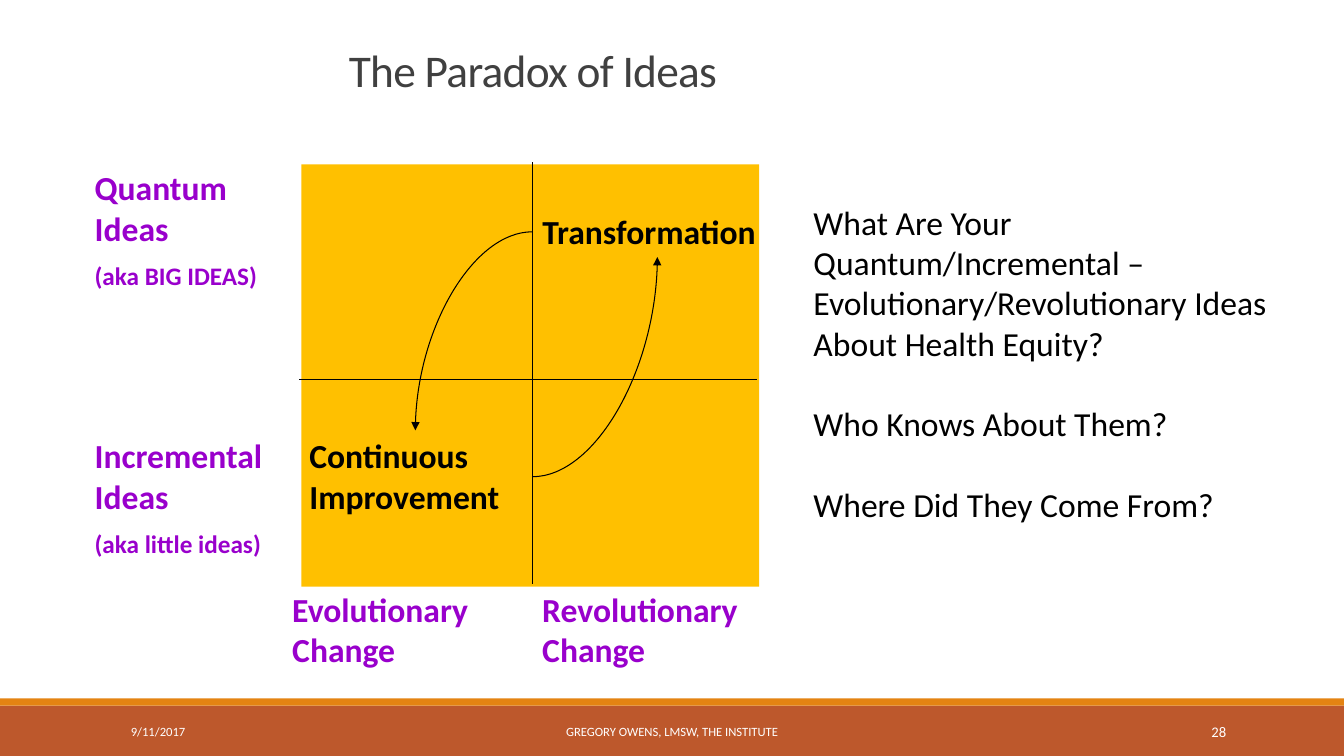
import pptx
import pptx.dml.color
import pptx.enum.shapes
import pptx.enum.text
import pptx.oxml
import pptx.oxml.ns
import pptx.util

PX = 9144
COLOURS = {
    "title": "404040",
    "ink": "000000",
    "axis": "9900CC",
    "matrix": "FFC000",
    "footer": "BD582C",
    "stripe": "E48312",
    "light": "FFFFFF",
}
ALIGN = pptx.enum.text.PP_ALIGN
ANCHOR = pptx.enum.text.MSO_ANCHOR
CONNECTOR = pptx.enum.shapes.MSO_CONNECTOR
QUADRANT_TEXTS = [
    (84, 161, 208, 136, "axis", "Quantum Ideas", "(aka BIG IDEAS)"),
    (84, 427, 212, 136, "axis", "Incremental Ideas", "(aka little ideas)"),
    (280, 579, 248, 91, "axis", "Evolutionary Change", None),
    (528, 579, 273, 91, "axis", "Revolutionary Change", None),
    (528, 204, 248, 50, "ink", "Transformation", None),
    (297, 427, 231, 91, "ink", "Continuous Improvement", None),
]
QUESTIONS = [
    "What Are Your Quantum/Incremental – Evolutionary/Revolutionary Ideas About Health Equity?",
    "Who Knows About Them?",
    "Where Did They Come From?",
]
FOOTER_TEXTS = [
    (120, 270, "9/11/2017", 9, ALIGN.LEFT),
    (403, 527, "GREGORY OWENS, LMSW, THE INSTITUTE", 9, ALIGN.CENTER),
    (1083, 143, "28", 10.5, ALIGN.RIGHT),
]


def colour(name):
    return pptx.dml.color.RGBColor.from_string(COLOURS[name])


def write(frame, text, size=24, ink="ink", bold=False, align=ALIGN.LEFT,
          before=0, spacing=None, tracking=None):
    """Write text into the empty first paragraph of a frame, or into a new one."""
    para = frame.paragraphs[0] if not frame.text else frame.add_paragraph()
    para.alignment = align
    para.space_before = pptx.util.Pt(before)
    if spacing:
        para.line_spacing = spacing
    span = para.add_run()
    span.text = text
    span.font.name = "Calibri"
    span.font.size = pptx.util.Pt(size)
    span.font.bold = bold
    span.font.color.rgb = colour(ink)
    if tracking:
        span.font._element.set("spc", str(tracking))


class SlideBuilder:
    def __init__(self, page):
        self.page = page
        self.line_width = pptx.util.Pt(0.75)

    def title(self, text, left, top, width, height):
        box = self.page.shapes.title
        box.left, box.top, box.width, box.height = (
            value * PX for value in (left, top, width, height))
        frame = box.text_frame
        frame.auto_size = pptx.enum.text.MSO_AUTO_SIZE.NONE
        frame.vertical_anchor = ANCHOR.BOTTOM
        write(frame, text, size=32.4, ink="title", spacing=0.85, tracking=-50)

    def rectangle(self, left, top, width, height, fill):
        box = self.page.shapes.add_shape(
            pptx.enum.shapes.MSO_SHAPE.RECTANGLE,
            left * PX, top * PX, width * PX, height * PX)
        box.shadow.inherit = False
        box.fill.solid()
        box.fill.fore_color.rgb = colour(fill)
        box.line.fill.background()

    def textbox(self, left, top, width, height, anchor=ANCHOR.TOP):
        box = self.page.shapes.add_textbox(
            left * PX, top * PX, width * PX, height * PX)
        frame = box.text_frame
        frame.word_wrap = True
        frame.vertical_anchor = anchor
        return frame

    def line(self, start, end, kind=CONNECTOR.STRAIGHT):
        connector = self.page.shapes.add_connector(
            kind, *(value * PX for value in start + end))
        connector.line.width = self.line_width
        connector.line.color.rgb = colour("ink")
        properties = connector._element.spPr
        properties.append(pptx.oxml.parse_xml(
            f'<a:effectLst {pptx.oxml.ns.nsdecls("a")}/>'))
        return properties

    def curved_arrow(self, start, end):
        properties = self.line(start, end, CONNECTOR.CURVE)
        properties.find(pptx.oxml.ns.qn("a:prstGeom")).set("prst", "curvedConnector2")
        properties.find(pptx.oxml.ns.qn("a:ln")).append(pptx.oxml.parse_xml(
            f'<a:tailEnd {pptx.oxml.ns.nsdecls("a")} type="triangle"/>'))


def main():
    deck = pptx.Presentation()
    deck.slide_width, deck.slide_height = 1333 * PX, 750 * PX
    builder = SlideBuilder(deck.slides.add_slide(deck.slide_layouts[5]))

    builder.rectangle(0, 700, 1333, 50, "footer")
    builder.rectangle(0, 693, 1333, 7, "stripe")
    builder.title("The Paradox of Ideas", 336, 48, 581, 53)

    builder.rectangle(299, 163, 454, 419, "matrix")
    builder.line((297, 377), (751, 377))
    builder.line((528, 161), (528, 579))
    for left, top, width, height, ink, label, nickname in QUADRANT_TEXTS:
        frame = builder.textbox(left, top, width, height)
        write(frame, label, ink=ink, bold=True)
        if nickname:
            write(frame, nickname, size=18, ink=ink, bold=True, before=9)
    builder.curved_arrow((528, 230), (412, 427))
    builder.curved_arrow((528, 473), (652, 255))

    frame = builder.textbox(797, 195, 507, 333)
    for index, question in enumerate(QUESTIONS):
        write(frame, question, before=29 if index else 0)

    for left, width, text, size, align in FOOTER_TEXTS:
        frame = builder.textbox(left, 706, width, 40, ANCHOR.MIDDLE)
        write(frame, text, size=size, ink="light", align=align)

    deck.save("out.pptx")


if __name__ == "__main__":
    main()
